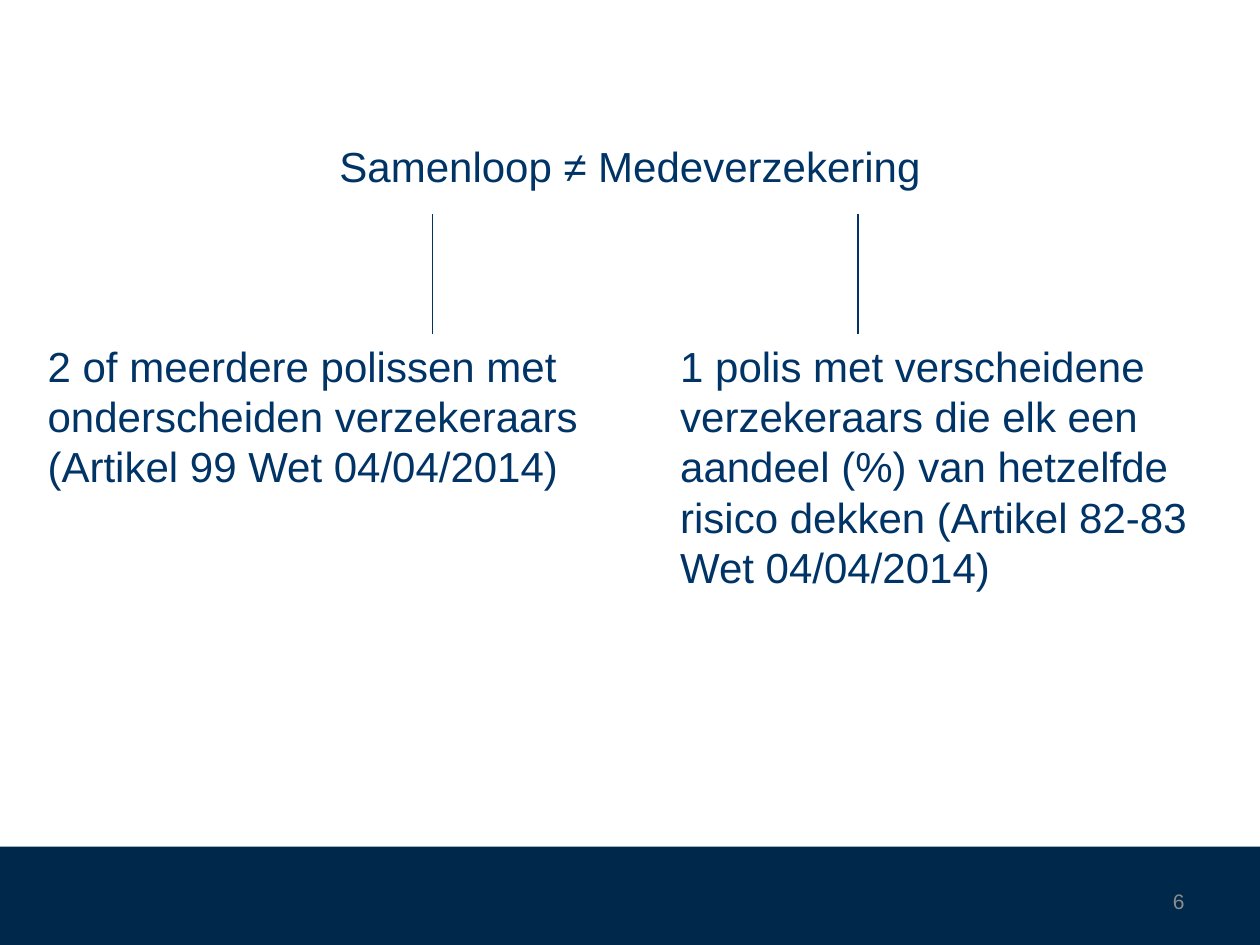
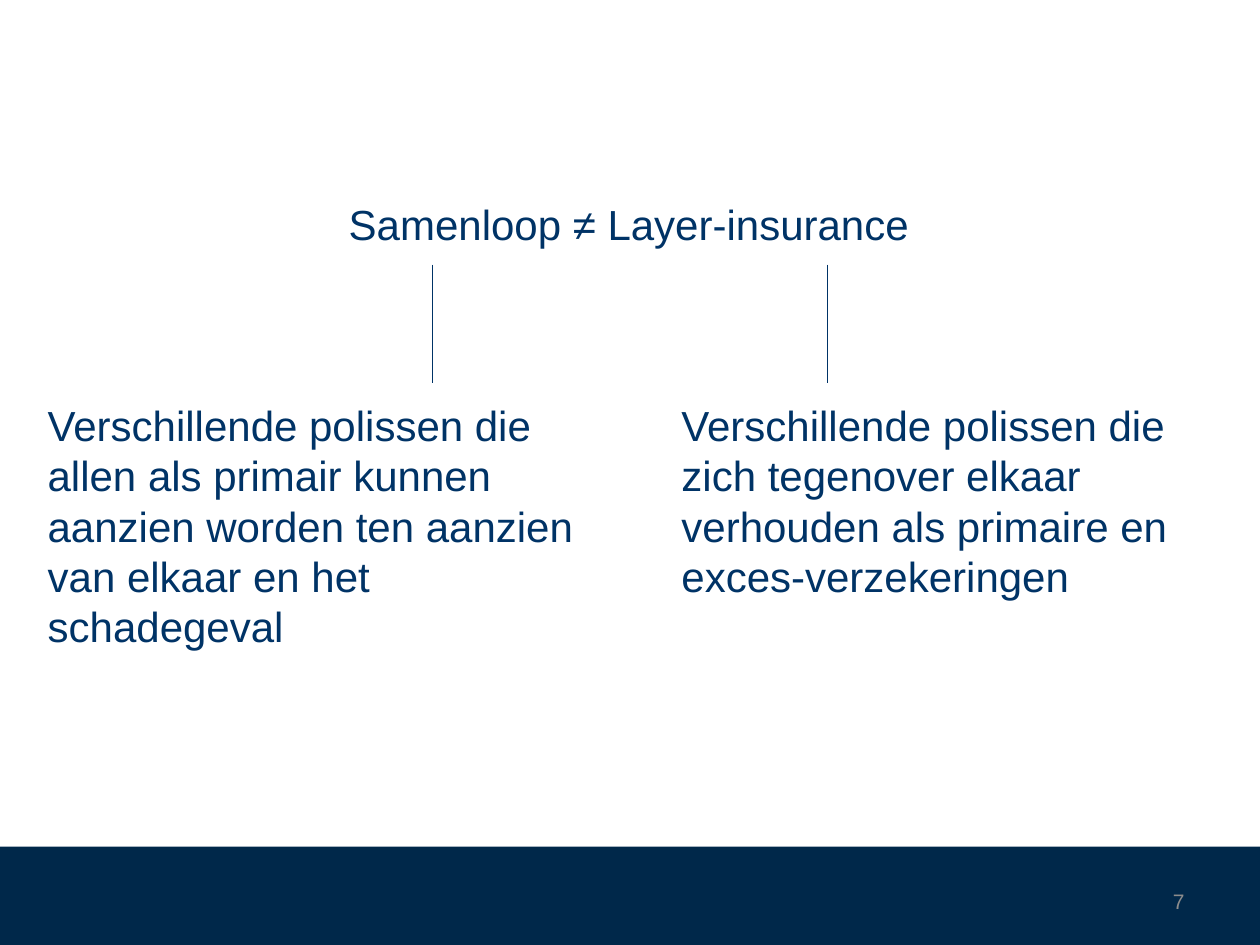
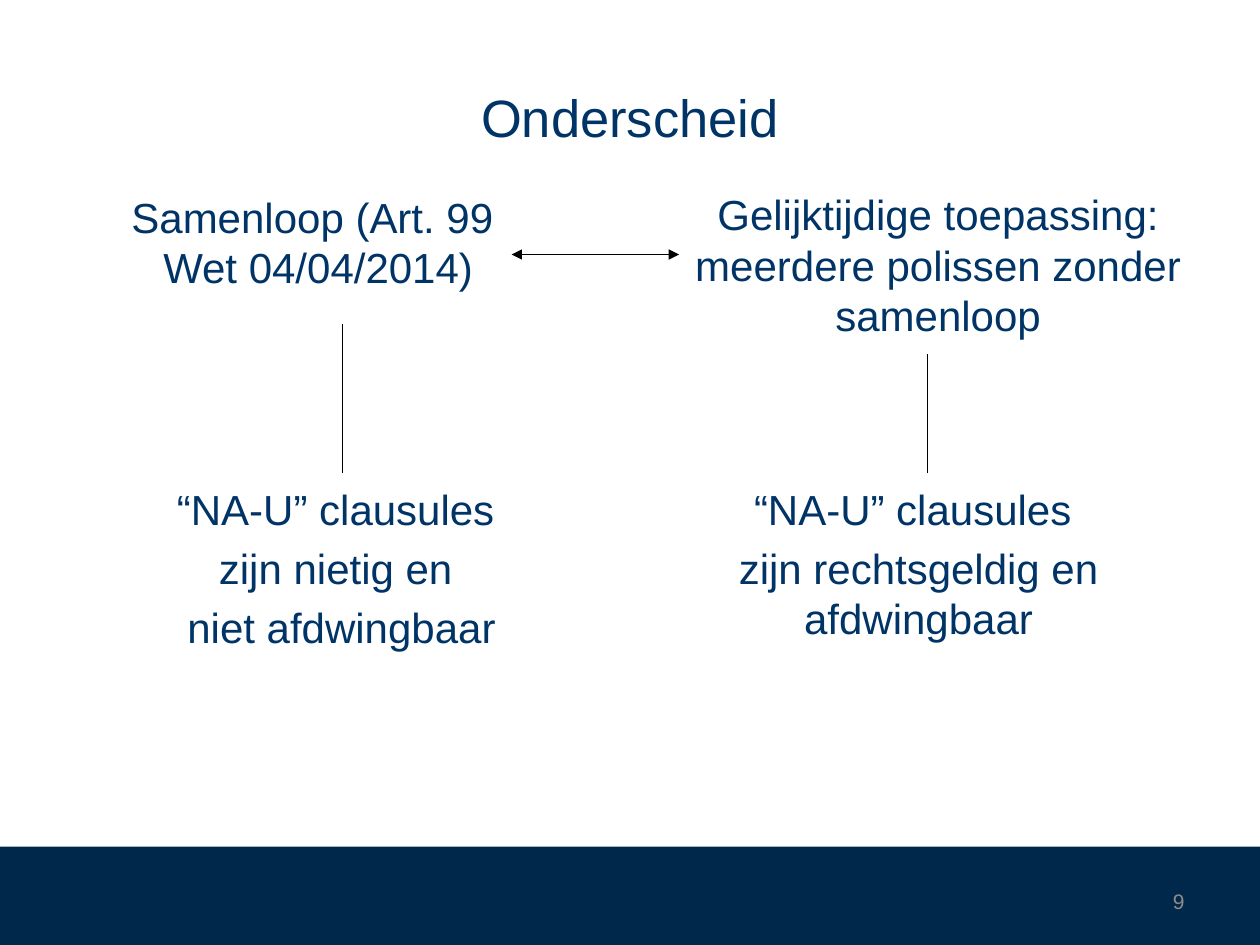
"""Build three slides that set concurrence of insurance policies apart from related notions."""
from lxml.etree import SubElement
from pptx import Presentation
from pptx.dml.color import RGBColor as RGB
from pptx.enum.shapes import MSO_CONNECTOR as LINK, MSO_SHAPE as SHAPE
from pptx.enum.text import MSO_ANCHOR as ANCHOR, PP_ALIGN as ALIGN
from pptx.oxml.ns import qn
from pptx.util import Inches, Pt

HUES = {"band": "00284A", "text": "003366", "page": "8C8C8C", "black": "000000"}
FONT = "Arial"


def write(slide, at, lines, size=24, hue="text", align=ALIGN.LEFT, anchor=ANCHOR.TOP, gap=0):
    frame = slide.shapes.add_textbox(*map(Inches, at)).text_frame
    frame.word_wrap = True
    frame.vertical_anchor = anchor
    for i, line in enumerate(lines):
        para = frame.paragraphs[0] if i == 0 else frame.add_paragraph()
        para.alignment = align
        if i and gap:
            para.space_before = Pt(gap)
        run = para.add_run()
        run.text = line
        run.font.name = FONT
        run.font.size = Pt(size)
        run.font.color.rgb = RGB.from_string(HUES[hue])


def link(slide, x1, y1, x2, y2, hue="text", heads=False):
    line = slide.shapes.add_connector(LINK.STRAIGHT, *map(Inches, (x1, y1, x2, y2)))
    line.line.color.rgb = RGB.from_string(HUES[hue])
    line.line.width = Pt(0.75)
    if heads:
        for end in ("a:headEnd", "a:tailEnd"):
            SubElement(line.line._ln, qn(end), type="triangle")
    SubElement(line._element.spPr, qn("a:effectLst"))


deck = Presentation()
deck.slide_width, deck.slide_height = Inches(10), Inches(7.5)

pages = [
    ("6", "Samenloop ≠ Medeverzekering", (0.5, 0.85, 9, 0.93), 24),
    ("7", "Samenloop ≠ Layer-insurance", (0.49, 1.31, 9, 0.93), 24),
    ("9", "Onderscheid", (0.5, 0.3, 9, 1.25), 30),
]
slides = []
for num, title, at, size in pages:
    slide = deck.slides.add_slide(deck.slide_layouts[6])
    band = slide.shapes.add_shape(SHAPE.RECTANGLE, *map(Inches, (0, 6.72, 10, 0.78)))
    band.shadow.inherit = False
    band.fill.solid()
    band.fill.fore_color.rgb = RGB.from_string(HUES["band"])
    band.line.fill.background()
    write(slide, at, [title], size, align=ALIGN.CENTER, anchor=ANCHOR.MIDDLE)
    write(slide, (7.17, 6.95, 2.33, 0.4), [num], 12, "page", ALIGN.RIGHT, ANCHOR.MIDDLE)
    slides.append(slide)

pairs = [
    (slides[0], 2.65, 1.7, 2.65, [
        (0.28, 3.43, "2 of meerdere polissen met onderscheiden verzekeraars (Artikel 99 Wet 04/04/2014)"),
        (5.3, 6.81, "1 polis met verscheidene verzekeraars die elk een aandeel (%) van hetzelfde "
                    "risico dekken (Artikel 82-83 Wet 04/04/2014)"),
    ]),
    (slides[1], 3.12, 2.1, 3.04, [
        (0.28, 3.43, "Verschillende polissen die allen als primair kunnen aanzien worden ten aanzien "
                     "van elkaar en het schadegeval"),
        (5.31, 6.57, "Verschillende polissen die zich tegenover elkaar verhouden als primaire en "
                     "exces-verzekeringen"),
    ]),
]
for slide, top, start, end, sides in pairs:
    for left, mid, words in sides:
        write(slide, (left, top, 4.42, 2.2), [words])
        link(slide, mid, start, mid, end)

last = slides[2]
sides = [
    ((0.28, 1.47, 4.49, 0.91), ["Samenloop (Art. 99 ", "Wet 04/04/2014)"], 2.72, 2.57,
     0.5, ["“NA-U” clausules ", "zijn nietig en ", "niet afdwingbaar"]),
    ((5.16, 1.45, 4.57, 1.31), ["Gelijktijdige toepassing: meerdere polissen zonder samenloop"], 7.36, 2.81,
     5.08, ["“NA-U” clausules ", "zijn rechtsgeldig en afdwingbaar"]),
]
for at, head, mid, start, left, rules in sides:
    write(last, at, head, align=ALIGN.CENTER)
    link(last, mid, start, mid, 3.75, "black")
    write(last, (left, 3.79, 4.42, 2.17), rules, align=ALIGN.CENTER, gap=4.8)
link(last, 4.06, 2.02, 5.39, 2.02, "black", heads=True)

deck.save("out.pptx")
